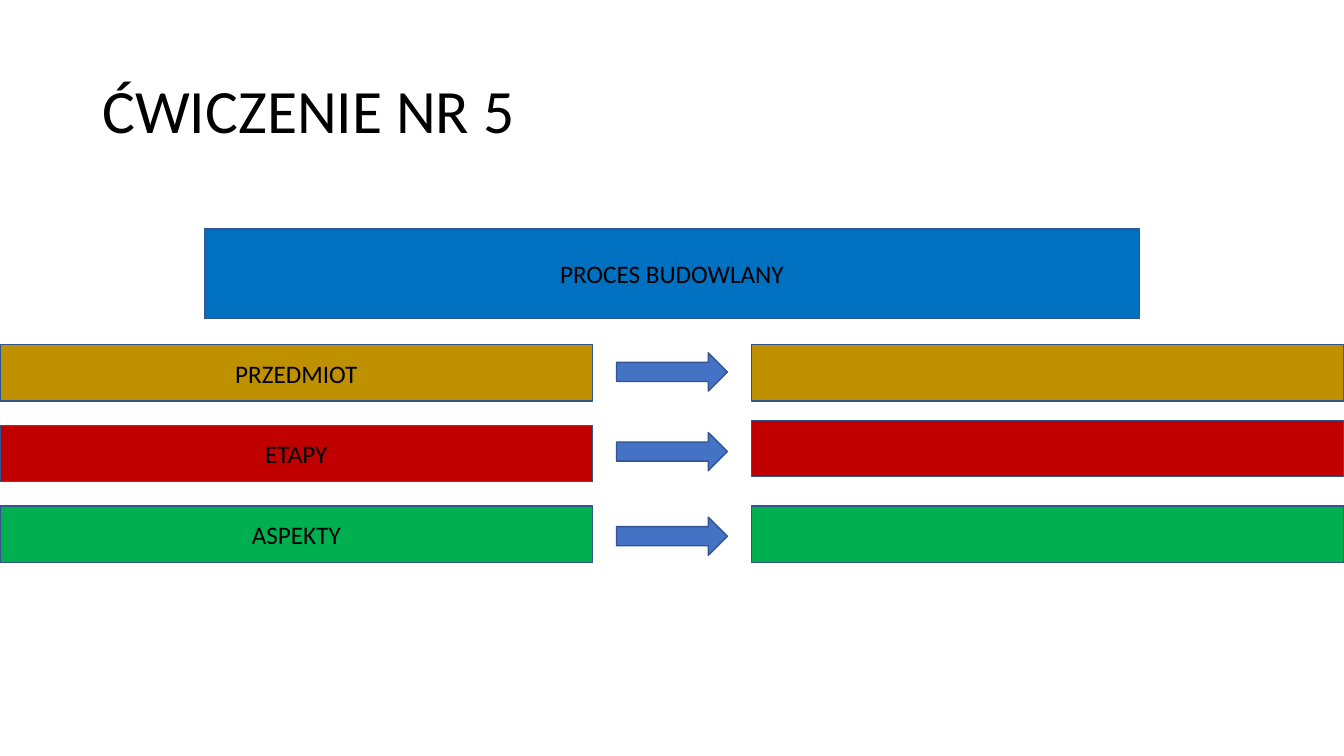
import pptx
import pptx.util
import pptx.dml.color
import pptx.enum.shapes
import pptx.enum.text

Pt = pptx.util.Pt
Shape = pptx.enum.shapes.MSO_SHAPE
Align = pptx.enum.text.PP_ALIGN

WIDTH, HEIGHT = 960, 540
BAR_W, BAR_H = 423.36, 40.32
TOP, PITCH = 246.24, 57.6
ARROW_W, ARROW_H = 79.2, 27.36

# label, fill, top of right bar, top of arrow
ROWS = [
    ("PRZEDMIOT", "BF9000", 246.24, 252),
    ("ETAPY", "C00000", 300.24, 308.88),
    ("ASPEKTY", "00B050", 361.44, 369.36),
]


def color(hex_code):
    return pptx.dml.color.RGBColor.from_string(hex_code)


def write(shape, text, size, align):
    """Put one vertically centred line of black text into a shape."""
    frame = shape.text_frame
    frame.word_wrap = True
    frame.vertical_anchor = pptx.enum.text.MSO_ANCHOR.MIDDLE
    line = frame.paragraphs[0]
    line.alignment = align
    run = line.add_run()
    run.text = text
    run.font.name = "Calibri"
    run.font.size = Pt(size)
    run.font.color.rgb = color("000000")


def add_title(slide, text):
    box = slide.shapes.add_textbox(Pt(66), Pt(28.8), Pt(828), Pt(104.4))
    write(box, text, 44, Align.LEFT)
    box.text_frame.paragraphs[0].line_spacing = 0.9


def add_block(slide, kind, left, top, width, height, fill, text=""):
    block = slide.shapes.add_shape(
        kind, Pt(left), Pt(top), Pt(width), Pt(height))
    block.shadow.inherit = False
    block.fill.solid()
    block.fill.fore_color.rgb = color(fill)
    block.line.color.rgb = color("325491")
    block.line.width = Pt(1)
    if text:
        write(block, text, 18, Align.CENTER)


def main():
    deck = pptx.Presentation()
    deck.slide_width, deck.slide_height = Pt(WIDTH), Pt(HEIGHT)
    slide = deck.slides.add_slide(deck.slide_layouts[6])

    add_title(slide, "ĆWICZENIE NR 5")
    add_block(slide, Shape.RECTANGLE, 146, 163.44, 668, 64.08,
              "0070C0", "PROCES BUDOWLANY")
    for row, (label, fill, bar_top, arrow_top) in enumerate(ROWS):
        add_block(slide, Shape.RECTANGLE, 0, TOP + row * PITCH,
                  BAR_W, BAR_H, fill, label)
        add_block(slide, Shape.RECTANGLE, WIDTH - BAR_W, bar_top,
                  BAR_W, BAR_H, fill)
        add_block(slide, Shape.RIGHT_ARROW, (WIDTH - ARROW_W) / 2, arrow_top,
                  ARROW_W, ARROW_H, "4472C4")
    deck.save("out.pptx")


if __name__ == "__main__":
    main()
